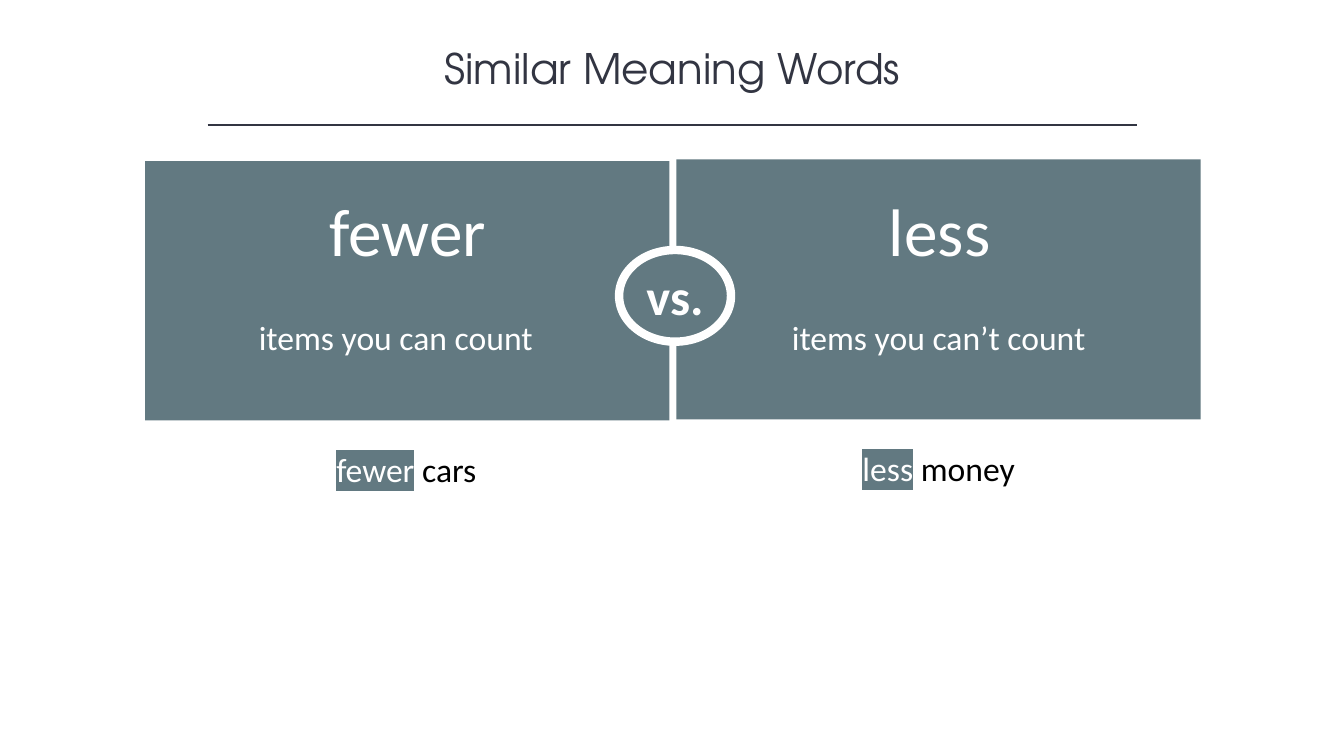
"""Build a slide that contrasts the words fewer and less."""
from lxml import etree
from pptx import Presentation
from pptx.dml.color import RGBColor
from pptx.enum import shapes, text
from pptx.oxml.ns import qn
from pptx.util import Inches, Pt

WHITE = RGBColor(0xFF, 0xFF, 0xFF)
BLACK = RGBColor(0, 0, 0)
SLATE = RGBColor(0x62, 0x79, 0x81)
NAVY = RGBColor(0x32, 0x35, 0x42)


class WordSlide:
    """Hold the fonts and the current slide, and draw its elements."""

    title_font = "TeX Gyre Adventor"
    body_font = "Calibri"

    def __init__(self, prs):
        self.slide = prs.slides.add_slide(prs.slide_layouts[5])

    def style(self, p, size, color=None, font=None, bold=False):
        p.alignment = text.PP_ALIGN.CENTER
        p.font.name = font or self.body_font
        p.font.size = Pt(size)
        p.font.bold = bold
        if color is not None:
            p.font.color.rgb = color

    def title(self, words, box):
        sp = self.slide.shapes.title
        sp.left, sp.top, sp.width, sp.height = map(Inches, box)
        tf = sp.text_frame
        tf.text = words
        tf.vertical_anchor = text.MSO_ANCHOR.TOP
        self.style(tf.paragraphs[0], 30, NAVY, self.title_font)

    def rule(self, left, right, y):
        line = self.slide.shapes.add_connector(
            shapes.MSO_CONNECTOR.STRAIGHT,
            Inches(left), Inches(y), Inches(right), Inches(y))
        line.line.color.rgb = NAVY
        line.line.width = Pt(1)
        etree.SubElement(line._element.spPr, qn("a:effectLst"))

    def shape(self, kind, box):
        sp = self.slide.shapes.add_shape(kind, *map(Inches, box))
        sp.shadow.inherit = False
        sp.fill.solid()
        sp.fill.fore_color.rgb = SLATE
        sp.line.fill.background()
        return sp

    def badge(self, words, box):
        sp = self.shape(shapes.MSO_SHAPE.OVAL, box)
        sp.line.color.rgb = WHITE
        sp.line.width = Pt(6)
        tf = sp.text_frame
        tf.word_wrap = False
        tf.vertical_anchor = text.MSO_ANCHOR.MIDDLE
        tf.text = words
        self.style(tf.paragraphs[0], 36, WHITE, bold=True)

    def textbox(self, box, wrap=True):
        tf = self.slide.shapes.add_textbox(*map(Inches, box)).text_frame
        tf.word_wrap = wrap
        return tf

    def label(self, words, box, size, wrap=True):
        tf = self.textbox(box, wrap)
        tf.text = words
        self.style(tf.paragraphs[0], size, WHITE)

    def example(self, word, noun, box):
        p = self.textbox(box).paragraphs[0]
        self.style(p, 24)
        for words, color in ((word, WHITE), (" " + noun, BLACK)):
            r = p.add_run()
            r.text = words
            r.font.color.rgb = color
        rPr = p.runs[0].font._element
        highlight = etree.Element(qn("a:highlight"))
        etree.SubElement(highlight, qn("a:srgbClr"), val=str(SLATE))
        rPr.find(qn("a:solidFill")).addnext(highlight)


def main():
    prs = Presentation()
    prs.slide_width, prs.slide_height = Inches(13.33), Inches(7.5)
    s = WordSlide(prs)
    s.title("Similar Meaning Words", (1.67, 0.37, 10, 0.61))
    s.rule(2.06, 11.28, 1.24)

    panels = ((1.44, 1.6, 5.2, 2.57), (6.71, 1.58, 5.2, 2.58))
    for panel in panels:
        s.shape(shapes.MSO_SHAPE.RECTANGLE, panel)
    s.badge("vs.", (6.14, 2.48, 1.11, 0.91))

    columns = (
        ("fewer", (3.16, 1.83, 1.77, 0.91),
         "items you can count", (1.83, 3.09, 4.19, 0.5),
         "cars", (1.44, 4.4, 5.18, 0.5)),
        ("less", (8.71, 1.83, 1.22, 0.91),
         "items you can’t count", (7.68, 3.09, 3.26, 0.5),
         "money", (6.71, 4.39, 5.2, 0.5)),
    )
    for word, word_box, meaning, meaning_box, noun, noun_box in columns:
        s.label(meaning, meaning_box, 24)
        s.label(word, word_box, 48, wrap=False)
        s.example(word, noun, noun_box)
    prs.save("out.pptx")


if __name__ == "__main__":
    main()
